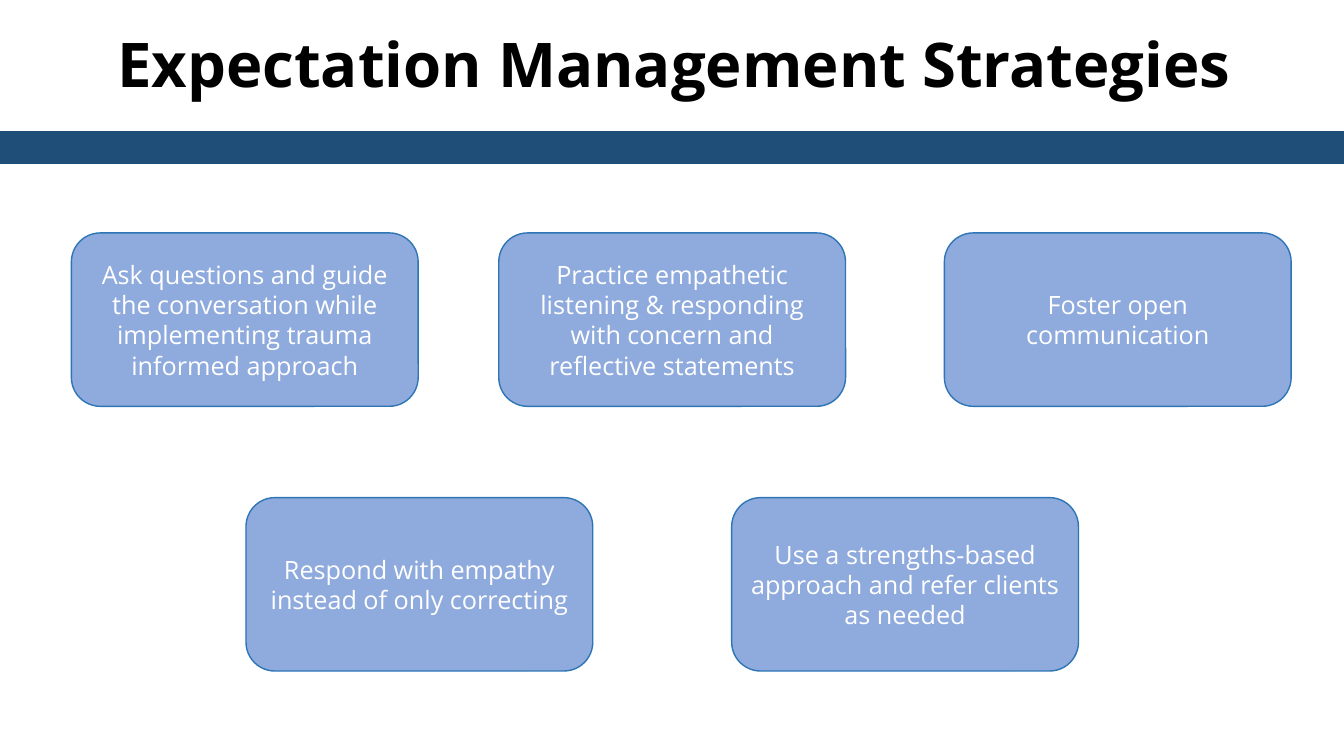
"""Build the slide of five expectation management strategies."""
import pptx
import pptx.dml.color
import pptx.enum.shapes
import pptx.enum.text
import pptx.util

Cm = pptx.util.Cm
Pt = pptx.util.Pt
RGBColor = pptx.dml.color.RGBColor
SHAPE = pptx.enum.shapes.MSO_SHAPE
ANCHOR = pptx.enum.text.MSO_ANCHOR
CENTER = pptx.enum.text.PP_ALIGN.CENTER

BLACK = RGBColor(0x00, 0x00, 0x00)
WHITE = RGBColor(0xFF, 0xFF, 0xFF)
NAVY = RGBColor(0x1F, 0x4E, 0x79)
BLUE = RGBColor(0x2E, 0x75, 0xB6)
LIGHT_BLUE = RGBColor(0x8F, 0xAA, 0xDC)

TITLE_FORMAT = {"name": "Open Sans", "size": Pt(44), "bold": True}
CARD_FORMAT = {"name": "Open Sans", "size": Pt(18), "bold": False}
CARD_WIDTH, CARD_HEIGHT = Cm(8.74), Cm(4.37)
TOP_ROW, BOTTOM_ROW = 5.87, 12.54
STRATEGIES = [
    (6.2, BOTTOM_ROW, "Respond with empathy instead of only correcting"),
    (12.57, TOP_ROW, "Practice empathetic listening & responding with concern "
                     "and reflective statements"),
    (18.44, BOTTOM_ROW, "Use a strengths-based approach and refer clients as needed"),
    (23.8, TOP_ROW, "Foster open communication"),
    (1.8, TOP_ROW, "Ask questions and guide the conversation while "
                   "implementing trauma informed approach"),
]


def write(box, text, formats, color, anchor):
    frame = box.text_frame
    frame.word_wrap = True
    frame.vertical_anchor = anchor
    para = frame.paragraphs[0]
    para.alignment = CENTER
    span = para.add_run()
    span.text = text
    for name, value in formats.items():
        setattr(span.font, name, value)
    span.font.color.rgb = color
    return para


def add_panel(kind, left, top, width, height, fill, line):
    panel = page.shapes.add_shape(kind, left, top, width, height)
    panel.shadow.inherit = False
    panel.fill.solid()
    panel.fill.fore_color.rgb = fill
    panel.line.color.rgb = line
    panel.line.width = Pt(1)
    return panel


deck = pptx.Presentation()
deck.slide_width, deck.slide_height = Cm(33.87), Cm(19.05)
page = deck.slides.add_slide(deck.slide_layouts[5])

title = page.shapes.title
title.left, title.top, title.width, title.height = Cm(1.47), Cm(0.74), Cm(31.06), Cm(2.13)
heading = write(title, "Expectation Management Strategies", TITLE_FORMAT, BLACK, ANCHOR.TOP)
heading.line_spacing = 0.9
title.text_frame.auto_size = pptx.enum.text.MSO_AUTO_SIZE.SHAPE_TO_FIT_TEXT

add_panel(SHAPE.RECTANGLE, 0, Cm(3.32), deck.slide_width, Cm(0.8), NAVY, NAVY)

for left, top, text in STRATEGIES:
    card = add_panel(SHAPE.ROUNDED_RECTANGLE, Cm(left), Cm(top),
                     CARD_WIDTH, CARD_HEIGHT, LIGHT_BLUE, BLUE)
    write(card, text, CARD_FORMAT, WHITE, ANCHOR.MIDDLE)

deck.save("out.pptx")
